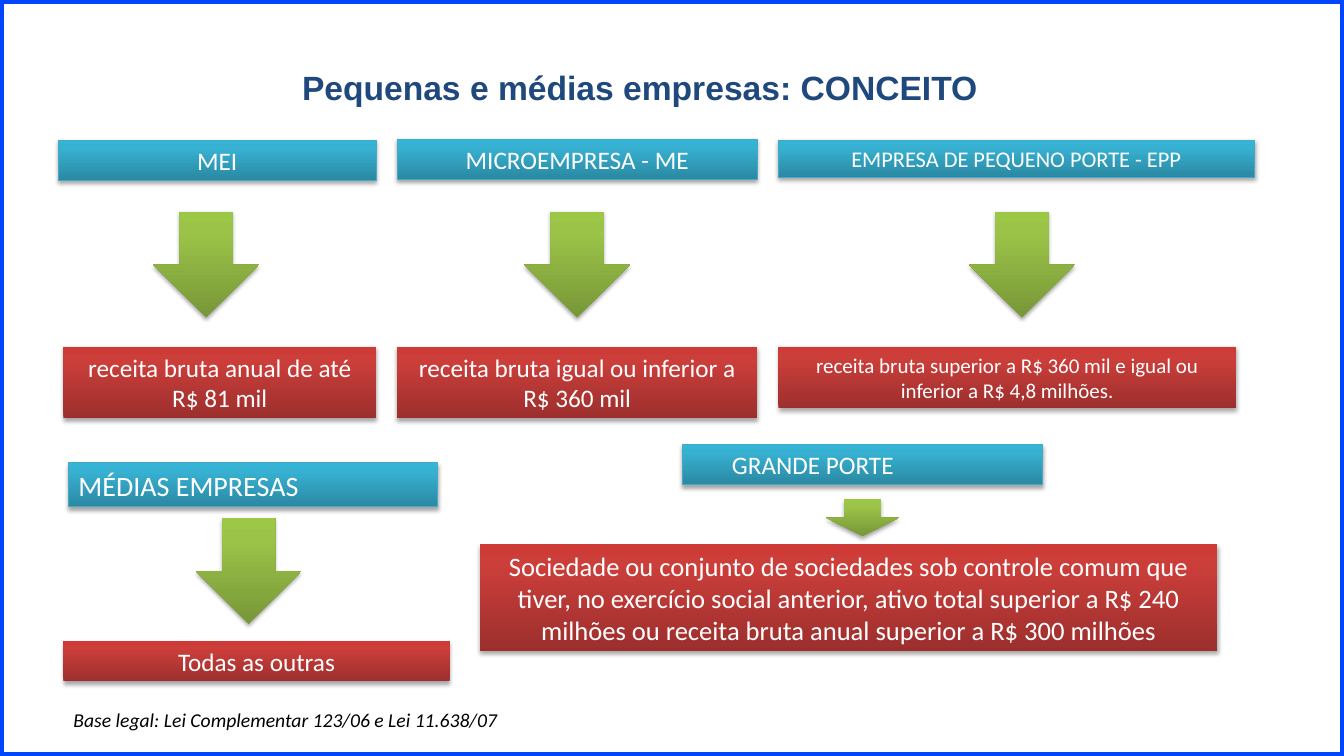
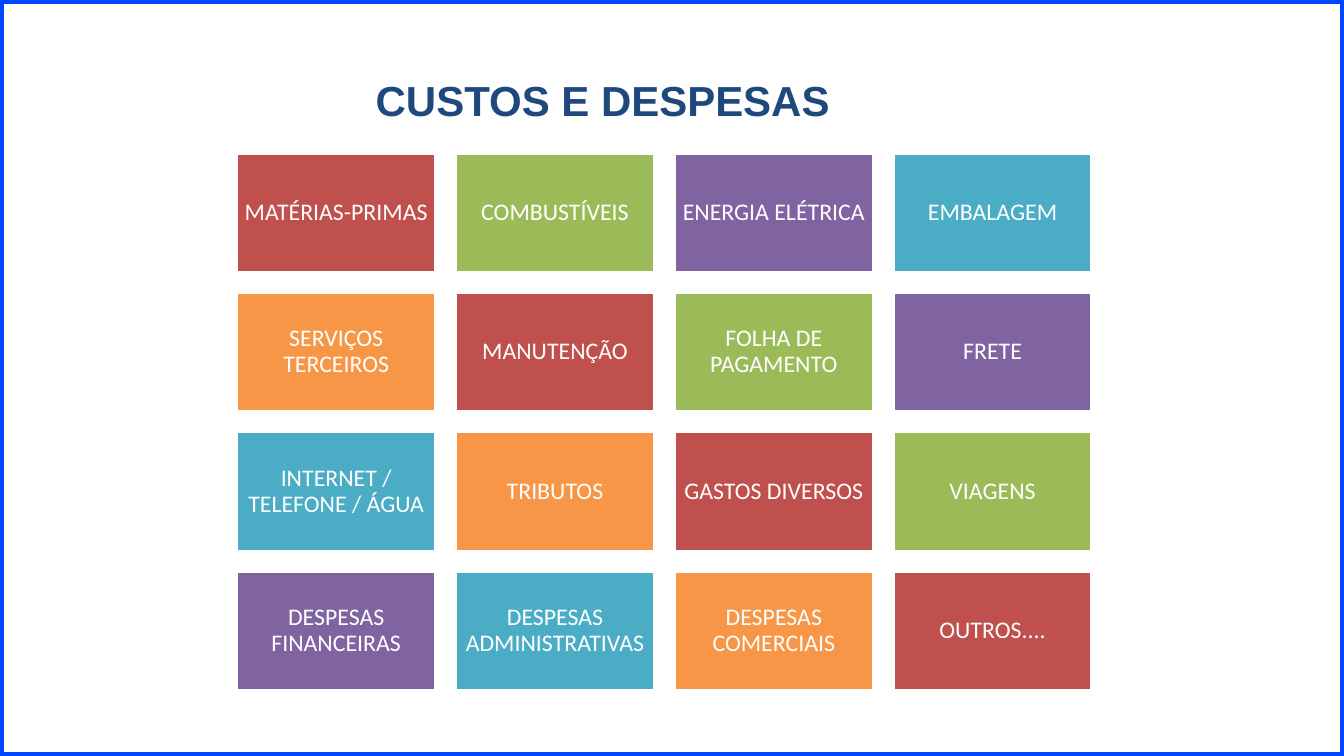
from lxml.etree import SubElement
from pptx import Presentation
from pptx.dml.color import RGBColor
from pptx.enum.shapes import MSO_SHAPE
from pptx.enum.text import MSO_ANCHOR, PP_ALIGN
from pptx.oxml.ns import qn
from pptx.util import Inches, Pt

COLORS = {
    "frame": "0046FF", "title": "1F497D", "white": "FFFFFF", "black": "000000",
    "head_line": "46AAC5",
    "red": "C0504D", "green": "9BBB59", "purple": "8064A2",
    "teal": "4BACC6", "orange": "F79646",
}
# Gradient stops run from the bottom (0 %) to the top (100 %).
GRADIENTS = {
    "head": ("2A88A2", "37B1D2", "34B4D6"),
    "arrow": ("779737", "9BC348", "9DC746"),
    "body": ("9C2F2D", "CB3E3A", "CE3B37"),
}
STOPS = (0, 80, 100)
TILE_CYCLE = ("red", "green", "purple", "teal", "orange")
SLIDE_W, SLIDE_H = 13.33, 7.5
ARROW = (1.05, 1.05)

# Boxes are (left, top, width, height) relative to the origin of the flow.
FLOWS = [
    dict(origin=(0.58, 1.39),
         head=("MEI", (0, 0, 3.15, 0.4), 18),
         arrow=(0.94, 0.71, *ARROW),
         body=("receita bruta anual de até R$ 81 mil",
               (0.05, 2.05, 3.1, 0.71), 18)),
    dict(origin=(3.94, 1.38),
         head=("MICROEMPRESA - ME", (0, 0, 3.57, 0.4), 18),
         arrow=(1.26, 0.72, *ARROW),
         body=("receita bruta igual ou inferior a R$ 360 mil",
               (0, 2.06, 3.57, 0.71), 18)),
    dict(origin=(7.72, 1.39),
         head=("EMPRESA DE PEQUENO PORTE - EPP", (0, 0, 4.72, 0.37), 16),
         arrow=(1.89, 0.71, *ARROW),
         body=("receita bruta superior a R$ 360 mil e igual ou inferior a "
               "R$ 4,8 milhões.", (0, 2.05, 4.54, 0.61), 15)),
    dict(origin=(0.63, 4.59),
         head=("MÉDIAS EMPRESAS", (0.05, 0, 3.66, 0.44), 20),
         arrow=(1.31, 0.55, *ARROW),
         body=("Todas as outras", (0, 1.77, 3.83, 0.4), 18),
         head_indent=0),
    dict(origin=(4.76, 4.41),
         head=("GRANDE PORTE", (2.01, 0, 3.57, 0.4), 18),
         arrow=(3.43, 0.54, 0.73, 0.37),
         body=("Sociedade ou conjunto de sociedades sob controle comum que "
               "tiver, no exercício social anterior, ativo total superior a "
               "R$ 240 milhões ou receita bruta anual superior a "
               "R$ 300 milhões", (0, 0.99, 7.31, 1.06), 19),
         head_indent=0.39),
]

COSTS = [
    "MATÉRIAS-PRIMAS", "COMBUSTÍVEIS", "ENERGIA ELÉTRICA", "EMBALAGEM",
    "SERVIÇOS TERCEIROS", "MANUTENÇÃO", "FOLHA DE PAGAMENTO", "FRETE",
    "INTERNET / TELEFONE / ÁGUA", "TRIBUTOS", "GASTOS DIVERSOS", "VIAGENS",
    "DESPESAS FINANCEIRAS", "DESPESAS ADMINISTRATIVAS",
    "DESPESAS COMERCIAIS", "OUTROS....",
]


def rgb(name):
    return RGBColor.from_string(COLORS[name])


def inches(box):
    return [Inches(v) for v in box]


def write(sp, text, size, color="white", font="Calibri",
          align=PP_ALIGN.CENTER, anchor=MSO_ANCHOR.MIDDLE):
    tf = sp.text_frame
    tf.word_wrap = True
    tf.vertical_anchor = anchor
    p = tf.paragraphs[0]
    p.text = text
    p.alignment = align
    p.font.size = Pt(size)
    p.font.name = font
    p.font.color.rgb = rgb(color)
    return p


def add_shape(s, kind, box):
    sp = s.shapes.add_shape(kind, *inches(box))
    sp.shadow.inherit = False
    return sp


def add_glossy(s, kind, box, style):
    """Add a shape with a vertical gradient and a soft shadow below it."""
    sp = s.shapes.add_shape(kind, *inches(box))
    pr = sp._element.spPr
    grad = SubElement(pr, qn("a:gradFill"), rotWithShape="1")
    stops = SubElement(grad, qn("a:gsLst"))
    for pos, color in zip(STOPS, GRADIENTS[style]):
        gs = SubElement(stops, qn("a:gs"), pos=str(pos * 1000))
        SubElement(gs, qn("a:srgbClr"), val=color)
    SubElement(grad, qn("a:lin"), ang="16200000", scaled="0")
    if style == "head":
        sp.line.color.rgb = rgb("head_line")
        sp.line.width = Pt(0.75)
    else:
        sp.line.fill.background()
    effects = SubElement(pr, qn("a:effectLst"))
    shadow = SubElement(effects, qn("a:outerShdw"), blurRad=str(Pt(3.1)),
                        dist=str(Pt(1.8)), dir="5400000", rotWithShape="0")
    color = SubElement(shadow, qn("a:srgbClr"), val=COLORS["black"])
    SubElement(color, qn("a:alpha"), val="35000")
    return sp


def add_title(s, text, box, size, line_spacing=1.0):
    tb = s.shapes.add_textbox(*inches(box))
    p = write(tb, text, size, "title", "Arial", anchor=MSO_ANCHOR.TOP)
    p.font.bold = True
    p.line_spacing = line_spacing


def new_slide(prs):
    """Add a blank slide with the frame that all slides share."""
    s = prs.slides.add_slide(prs.slide_layouts[6])
    frame = add_shape(s, MSO_SHAPE.RECTANGLE, (0, 0, SLIDE_W, SLIDE_H))
    frame.fill.background()
    frame.line.color.rgb = rgb("frame")
    frame.line.width = Pt(6)
    return s


def add_flow(s, origin, head, arrow, body, head_indent=None):
    """Place header, arrow and definition; an indent left-aligns the header."""
    def place(box):
        return origin[0] + box[0], origin[1] + box[1], box[2], box[3]

    add_glossy(s, MSO_SHAPE.DOWN_ARROW, place(arrow), "arrow")
    for style, (text, box, size) in (("head", head), ("body", body)):
        sp = add_glossy(s, MSO_SHAPE.RECTANGLE, place(box), style)
        p = write(sp, text, size)
        if style == "head" and head_indent is not None:
            p.alignment = PP_ALIGN.LEFT
            sp.text_frame.margin_left = Inches(0.1 + head_indent)


def add_tiles(s, labels, box, cols=4, gap=0.2):
    left, top, width, height = box
    rows = len(labels) // cols
    w = (width - gap * (cols - 1)) / cols
    h = (height - gap * (rows - 1)) / rows
    for i, label in enumerate(labels):
        row, col = divmod(i, cols)
        sp = add_shape(s, MSO_SHAPE.RECTANGLE,
                       (left + col * (w + gap), top + row * (h + gap), w, h))
        sp.fill.solid()
        sp.fill.fore_color.rgb = rgb(TILE_CYCLE[i % len(TILE_CYCLE)])
        sp.line.color.rgb = rgb("white")
        sp.line.width = Pt(2)
        tf = sp.text_frame
        tf.margin_left = tf.margin_right = Inches(0.07)
        tf.margin_top = tf.margin_bottom = Inches(0.07)
        write(sp, label, 17).line_spacing = 0.9


def concept_slide(prs):
    s = new_slide(prs)
    add_title(s, "Pequenas e médias empresas: CONCEITO",
              (0.9, 0.61, 10.89, 0.83), 24)
    for flow in FLOWS:
        add_flow(s, **flow)
    tb = s.shapes.add_textbox(*inches((0.63, 6.97, 5.72, 0.34)))
    p = write(tb, "Base legal: Lei Complementar 123/06 e Lei 11.638/07", 14,
              "black", align=PP_ALIGN.LEFT, anchor=MSO_ANCHOR.TOP)
    p.font.italic = True


def costs_slide(prs):
    s = new_slide(prs)
    add_title(s, "CUSTOS E DESPESAS", (2.18, 0.44, 7.6, 0.76), 30, 1.5)
    add_tiles(s, COSTS, (2.35, 1.52, 8.48, 5.33))


def main():
    prs = Presentation()
    prs.slide_width, prs.slide_height = Inches(SLIDE_W), Inches(SLIDE_H)
    concept_slide(prs)
    costs_slide(prs)
    prs.save("out.pptx")


if __name__ == "__main__":
    main()
